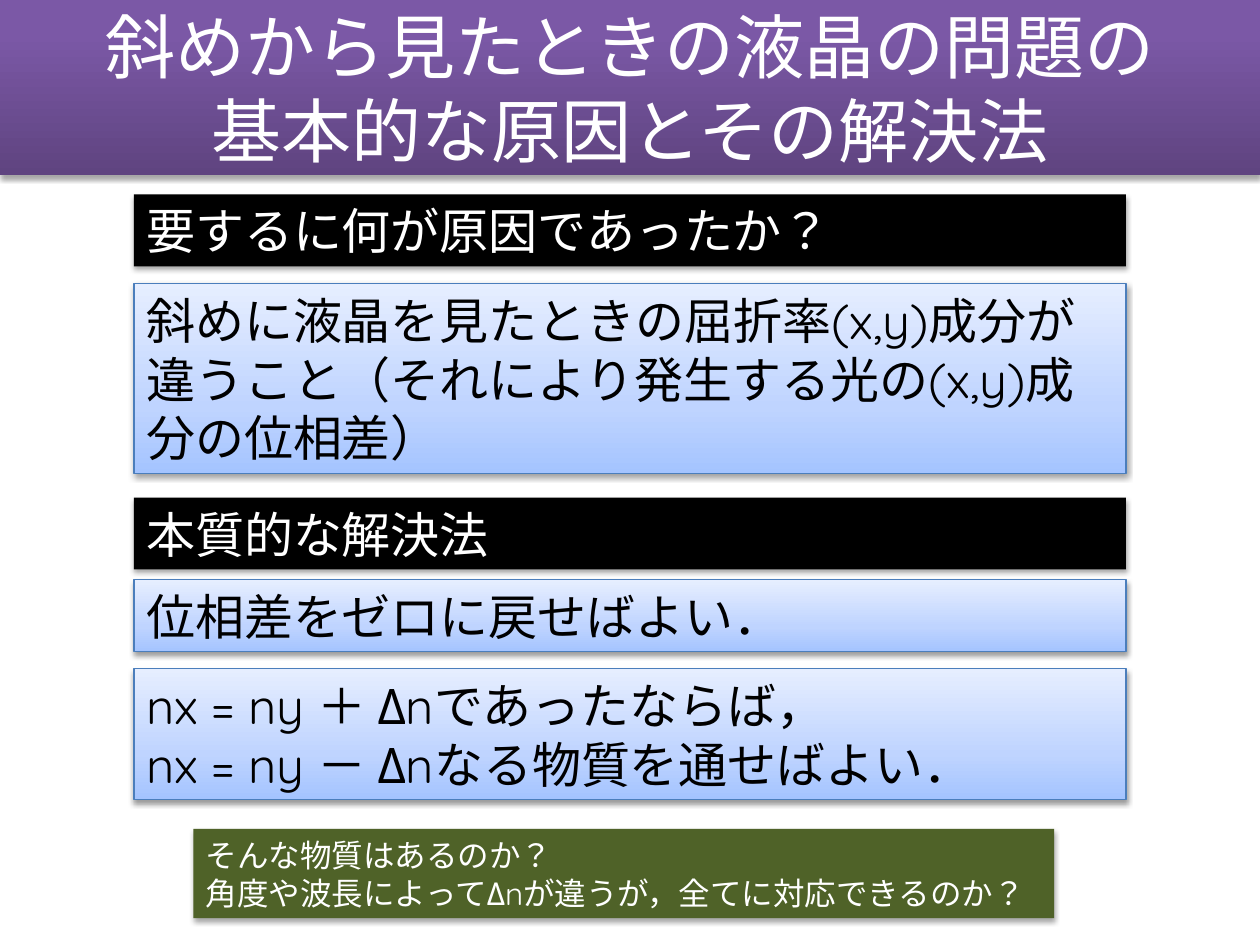
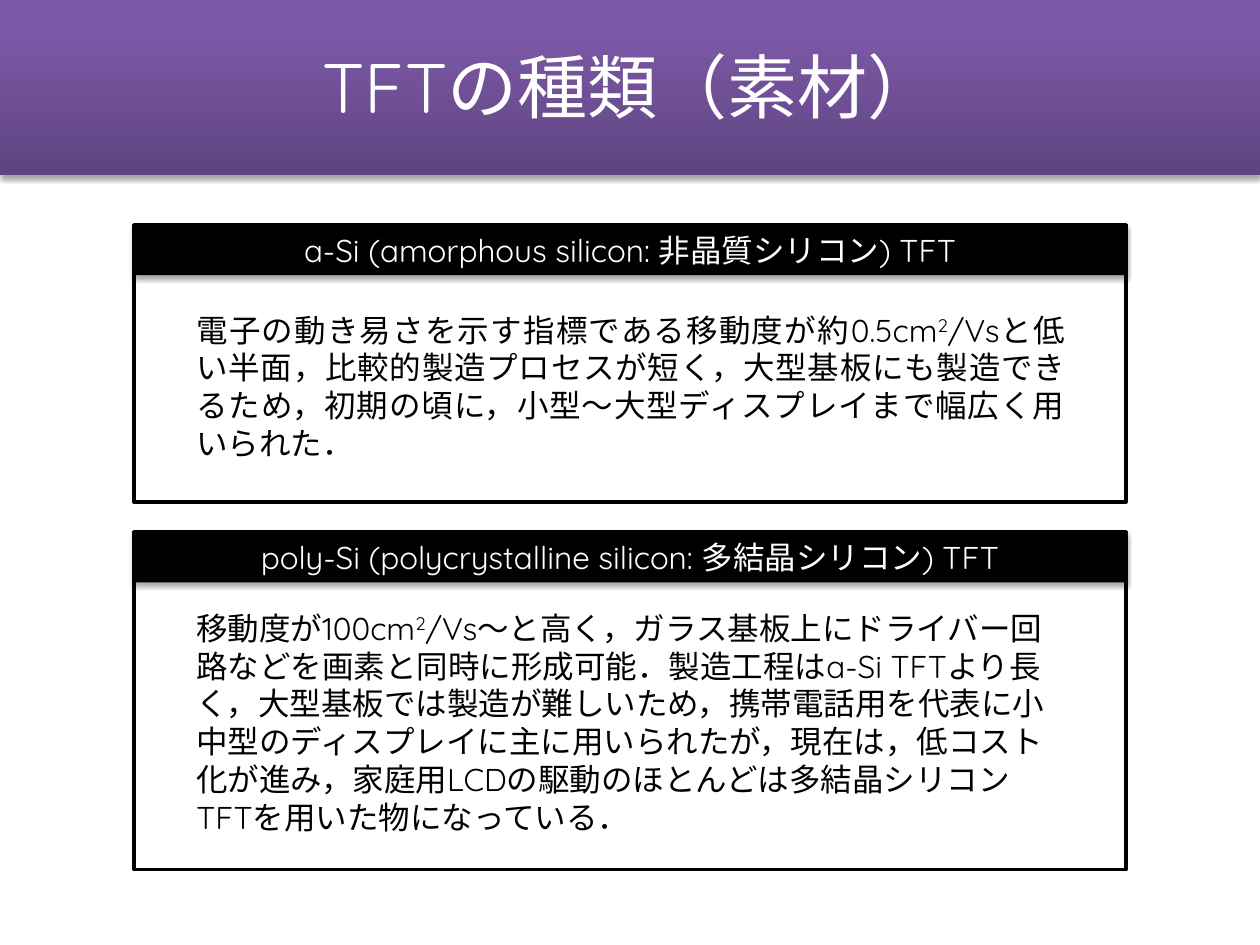
from lxml import etree
from pptx import Presentation
from pptx.dml.color import RGBColor
from pptx.enum.lang import MSO_LANGUAGE_ID
from pptx.enum.shapes import MSO_SHAPE
from pptx.enum.text import MSO_ANCHOR, MSO_AUTO_SIZE, PP_ALIGN
from pptx.oxml.ns import qn
from pptx.util import Cm, Pt

RECTANGLE = MSO_SHAPE.RECTANGLE
MIDDLE = MSO_ANCHOR.MIDDLE
FIT_SHAPE = MSO_AUTO_SIZE.SHAPE_TO_FIT_TEXT
LEFT, CENTER, JUSTIFY = PP_ALIGN.LEFT, PP_ALIGN.CENTER, PP_ALIGN.JUSTIFY
JAPANESE = MSO_LANGUAGE_ID.JAPANESE
TITLE_ONLY = 5

FONT = "Quicksand"
BLACK, WHITE, GREEN, BLUE_EDGE = "000000", "FFFFFF", "4F6228", "4B7EBC"
PURPLE_GRADIENT = [(0, "5F4480"), (80, "7B58A6"), (100, "7C57A8")]
BLUE_GRADIENT = [(0, "A4C4FF"), (35, "BFD4FF"), (100, "E6EEFF")]

PAGE_WIDTH, PAGE_HEIGHT = 25.4, 19.05
BAND_HEIGHT = 3.53
COLUMN_WIDTH = 20
COLUMN_LEFT = (PAGE_WIDTH - COLUMN_WIDTH) / 2
HEADING_HEIGHT = 1.45
CARD_HEADER_HEIGHT = 1.02
CARD_TEXT_LEFT, CARD_TEXT_WIDTH = 3.71, 18.01


def color(value):
    return RGBColor.from_string(value)


def fill_gradient(shape, stops):
    shape.fill.gradient()
    shape.fill.gradient_angle = 90
    stop_list = shape.element.spPr.find(qn("a:gradFill")).find(qn("a:gsLst"))
    for stop in list(stop_list):
        stop_list.remove(stop)
    for position, value in stops:
        stop = etree.SubElement(stop_list, qn("a:gs"), pos=str(position * 1000))
        etree.SubElement(stop, qn("a:srgbClr"), val=value)


def add_shadow(shape, opacity, distance):
    effects = shape.element.spPr.find(qn("a:effectLst"))
    shadow = etree.SubElement(
        effects, qn("a:outerShdw"), blurRad=str(Pt(3.1)), dist=str(Pt(distance)),
        dir="5400000", rotWithShape="0")
    shade = etree.SubElement(shadow, qn("a:srgbClr"), val=BLACK)
    etree.SubElement(shade, qn("a:alpha"), val=str(opacity * 1000))


def add_rectangle(page, left, top, width, height, fill=None, edge=None, edge_width=0.75):
    box = page.shapes.add_shape(RECTANGLE, Cm(left), Cm(top), Cm(width), Cm(height))
    box.shadow.inherit = False
    if fill is None:
        box.fill.background()
    elif isinstance(fill, list):
        fill_gradient(box, fill)
    else:
        box.fill.solid()
        box.fill.fore_color.rgb = color(fill)
    if edge:
        box.line.color.rgb = color(edge)
        box.line.width = Pt(edge_width)
    else:
        box.line.fill.background()
    return box


def write(box, lines, size, ink, align=LEFT, wrap=True):
    frame = box.text_frame
    frame.word_wrap = wrap
    frame.auto_size = FIT_SHAPE
    frame.vertical_anchor = MIDDLE
    for index, line in enumerate(lines):
        para = frame.add_paragraph() if index else frame.paragraphs[0]
        para.alignment = align
        para.font.size = Pt(size)
        para.font.name = FONT
        para.font.color.rgb = color(ink)
        for part, text in enumerate(line.split("^")):
            span = para.add_run()
            span.text = text
            span.font.language_id = JAPANESE
            if part % 2:
                span.font._element.set("baseline", "30000")


def add_page(deck, title_lines, title_top, title_height):
    page = deck.slides.add_slide(deck.slide_layouts[TITLE_ONLY])
    band = add_rectangle(page, 0, 0, PAGE_WIDTH, BAND_HEIGHT, PURPLE_GRADIENT)
    add_shadow(band, 35, 1.8)
    page.shapes.element.insert(2, band.element)
    title = page.shapes.title
    title.left, title.top = Cm(0), Cm(title_top)
    title.width, title.height = Cm(PAGE_WIDTH), Cm(title_height)
    write(title, title_lines, 40, WHITE, CENTER)
    return page


def add_heading(page, top, text, height=HEADING_HEIGHT, size=28, align=LEFT):
    heading = add_rectangle(page, COLUMN_LEFT, top, COLUMN_WIDTH, height, BLACK)
    add_shadow(heading, 35, 1.8)
    write(heading, [text], size, WHITE, align)


def add_answer(page, top, height, lines):
    answer = add_rectangle(page, COLUMN_LEFT, top, COLUMN_WIDTH, height,
                           BLUE_GRADIENT, BLUE_EDGE)
    add_shadow(answer, 38, 1.6)
    write(answer, lines, 28, BLACK)


def add_question(page, lines):
    question = add_rectangle(page, 3.9, 16.71, 17.35, 1.8, GREEN)
    add_shadow(question, 35, 1.8)
    write(question, lines, 18, WHITE, wrap=False)


def add_card(page, top, height, header, text, text_top, text_height, align):
    add_heading(page, top, header, CARD_HEADER_HEIGHT, 18, CENTER)
    box = page.shapes.add_textbox(Cm(CARD_TEXT_LEFT), Cm(text_top),
                                  Cm(CARD_TEXT_WIDTH), Cm(text_height))
    write(box, [text], 18, BLACK, align)
    add_rectangle(page, COLUMN_LEFT, top, COLUMN_WIDTH, height, edge=BLACK, edge_width=2)


def build_cause_page(deck):
    page = add_page(deck, ["斜めから見たときの液晶の問題の", "基本的な原因とその解決法"], -0.08, 3.68)
    add_heading(page, 3.92, "要するに何が原因であったか？")
    add_answer(page, 5.71, 3.84, [
        "斜めに液晶を見たときの屈折率(x,y)成分が違うこと（それにより発生する光の(x,y)成分の位相差）"])
    add_heading(page, 10.03, "本質的な解決法")
    add_answer(page, 11.69, HEADING_HEIGHT, ["位相差をゼロに戻せばよい．"])
    add_answer(page, 13.48, 2.64, [
        "nx = ny ＋ Δnであったならば，", "nx = ny － Δnなる物質を通せばよい．"])
    add_question(page, [
        "そんな物質はあるのか？", "角度や波長によってΔnが違うが，全てに対応できるのか？"])


def build_material_page(deck):
    page = add_page(deck, ["TFTの種類（素材）"], 0.74, 1.96)
    add_card(
        page, 4.53, 5.59, "a-Si (amorphous silicon: 非晶質シリコン) TFT",
        "電子の動き易さを示す指標である移動度が約0.5cm^2^/Vsと低い半面，"
        "比較的製造プロセスが短く，大型基板にも製造できるため，初期の頃に，"
        "小型～大型ディスプレイまで幅広く用いられた．", 6.12, 3.33, JUSTIFY)
    add_card(
        page, 10.72, 6.81, "poly-Si (polycrystalline silicon: 多結晶シリコン) TFT",
        "移動度が100cm^2^/Vs～と高く，ガラス基板上にドライバー回路などを画素と同時に形成可能．"
        "製造工程はa-Si TFTより長く，大型基板では製造が難しいため，"
        "携帯電話用を代表に小中型のディスプレイに主に用いられたが，現在は，低コスト化が進み，"
        "家庭用LCDの駆動のほとんどは多結晶シリコンTFTを用いた物になっている．", 12.12, 4.88, LEFT)


def main():
    deck = Presentation()
    deck.slide_width, deck.slide_height = Cm(PAGE_WIDTH), Cm(PAGE_HEIGHT)
    build_cause_page(deck)
    build_material_page(deck)
    deck.save("out.pptx")


if __name__ == "__main__":
    main()
